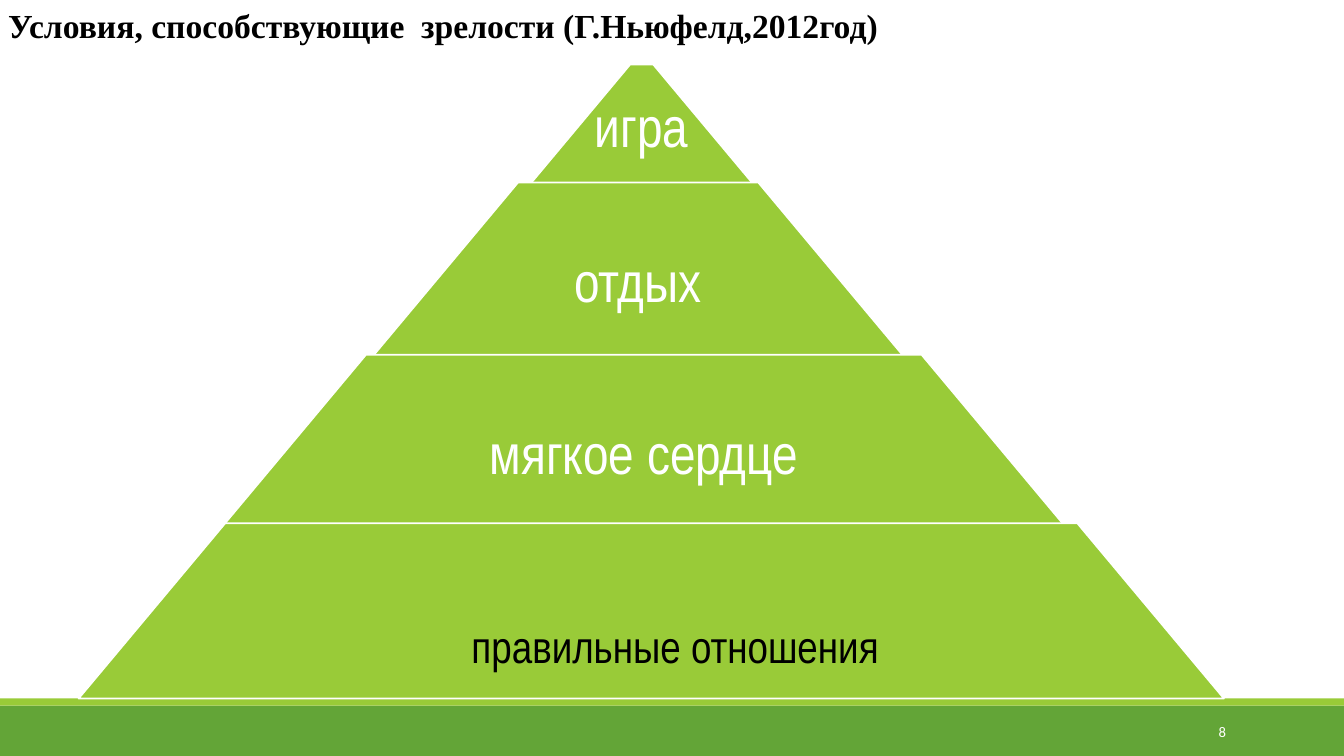
from pptx import Presentation
from pptx.dml.color import RGBColor
from pptx.enum.shapes import MSO_SHAPE as Shape
from pptx.enum.text import MSO_ANCHOR as Anchor, MSO_AUTO_SIZE as AutoSize, PP_ALIGN as Align
from pptx.util import Inches, Pt

# Content
TITLE = "Условия, способствующие  зрелости (Г.Ньюфелд,2012год)"
PAGE_NUMBER = "8"
# Tiers from the top down: tier box, label text, label share of tier width
TIERS = [
    ((5.18, 0.64, 2.37, 1.28), "игра", 1),
    ((3.45, 1.81, 5.76, 2.02), "отдых", 0.65),
    ((1.94, 3.52, 8.89, 2.02), "мягкое сердце", 0.65),
]
BASE_TIER = (0.78, 5.19, 11.36, 1.74)
BASE_LABEL = ((3.6, 5.57, 6.3, 1.74), "правильные отношения ")
SLOPE = 0.836


class Theme:
    green = RGBColor(0x63, 0xA5, 0x37)
    lime = RGBColor(0x99, 0xCB, 0x38)
    white = RGBColor(0xFF, 0xFF, 0xFF)
    black = RGBColor(0, 0, 0)
    title_font, label_font, number_font = "Times New Roman", "Arial Narrow", "Calibri"
    title_size, label_size, base_size, number_size = 24, 40, 32, 10.5
    outline = 1.25


def add_block(page, kind, box, color):
    block = page.shapes.add_shape(kind, *map(Inches, box))
    block.shadow.inherit = False
    block.fill.solid()
    block.fill.fore_color.rgb = color
    block.line.fill.background()
    return block


def add_tier(page, box):
    tier = add_block(page, Shape.TRAPEZOID, box, Theme.lime)
    tier.adjustments[0] = SLOPE
    tier.line.color.rgb = Theme.white
    tier.line.width = Pt(Theme.outline)


def write(shape, text, font, size, color, align, anchor=Anchor.MIDDLE, bold=False):
    frame = shape.text_frame
    frame.text = text
    frame.word_wrap = True
    frame.auto_size = AutoSize.NONE
    frame.vertical_anchor = anchor
    para = frame.paragraphs[0]
    para.alignment = align
    span = para.runs[0].font
    span.name, span.size, span.bold = font, Pt(size), bold
    span.color.rgb = color
    return frame


def add_label(page, box, text, size, color, inset):
    label = page.shapes.add_textbox(*map(Inches, box))
    frame = write(label, text, Theme.label_font, size, color, Align.CENTER)
    frame.margin_left = frame.margin_right = Inches(inset)
    frame.margin_top = frame.margin_bottom = Inches(inset)
    frame.paragraphs[0].line_spacing = 0.9


def main():
    deck = Presentation()
    deck.slide_width, deck.slide_height = Inches(13.33), Inches(7.5)
    page = deck.slides.add_slide(deck.slide_layouts[5])

    # Footer bands and page number
    add_block(page, Shape.RECTANGLE, (0, 7, 13.33, 0.5), Theme.green)
    add_block(page, Shape.RECTANGLE, (0, 6.93, 13.33, 0.07), Theme.lime)
    number = page.shapes.add_textbox(Inches(10.83), Inches(7.06), Inches(1.43), Inches(0.4))
    write(number, PAGE_NUMBER, Theme.number_font, Theme.number_size, Theme.white, Align.RIGHT)

    # Title
    title = page.shapes.title
    title.left, title.top = Inches(-0.02), Inches(0)
    title.width, title.height = Inches(11.57), Inches(0.5)
    write(title, TITLE, Theme.title_font, Theme.title_size, Theme.black,
          Align.JUSTIFY, Anchor.TOP, bold=True)

    # Pyramid: each label is centred on its tier
    for box, text, share in TIERS:
        add_tier(page, box)
        left, top, width, height = box
        label_box = (left + width * (1 - share) / 2, top, width * share, height)
        add_label(page, label_box, text, Theme.label_size, Theme.white, 0.06)

    # Base tier with its lower label
    add_tier(page, BASE_TIER)
    add_label(page, *BASE_LABEL, Theme.base_size, Theme.black, 0.07)

    deck.save("out.pptx")


if __name__ == "__main__":
    main()
